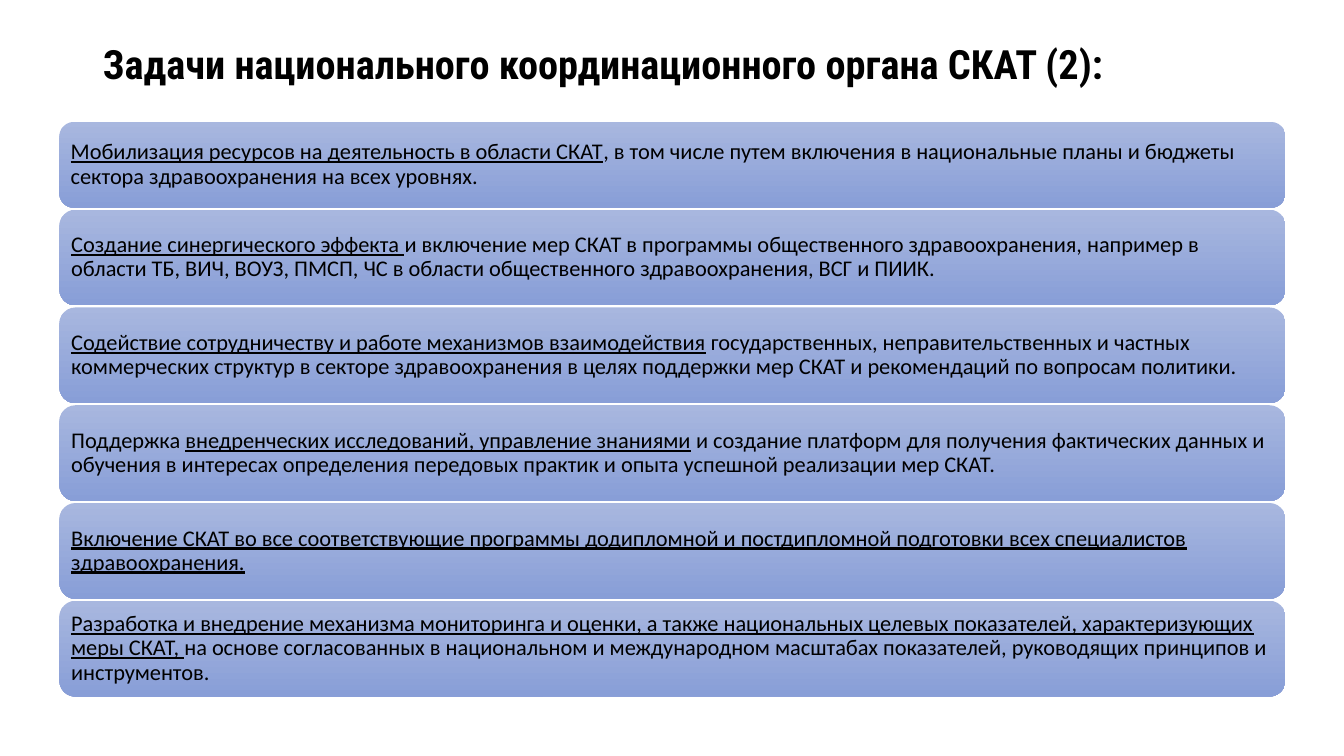
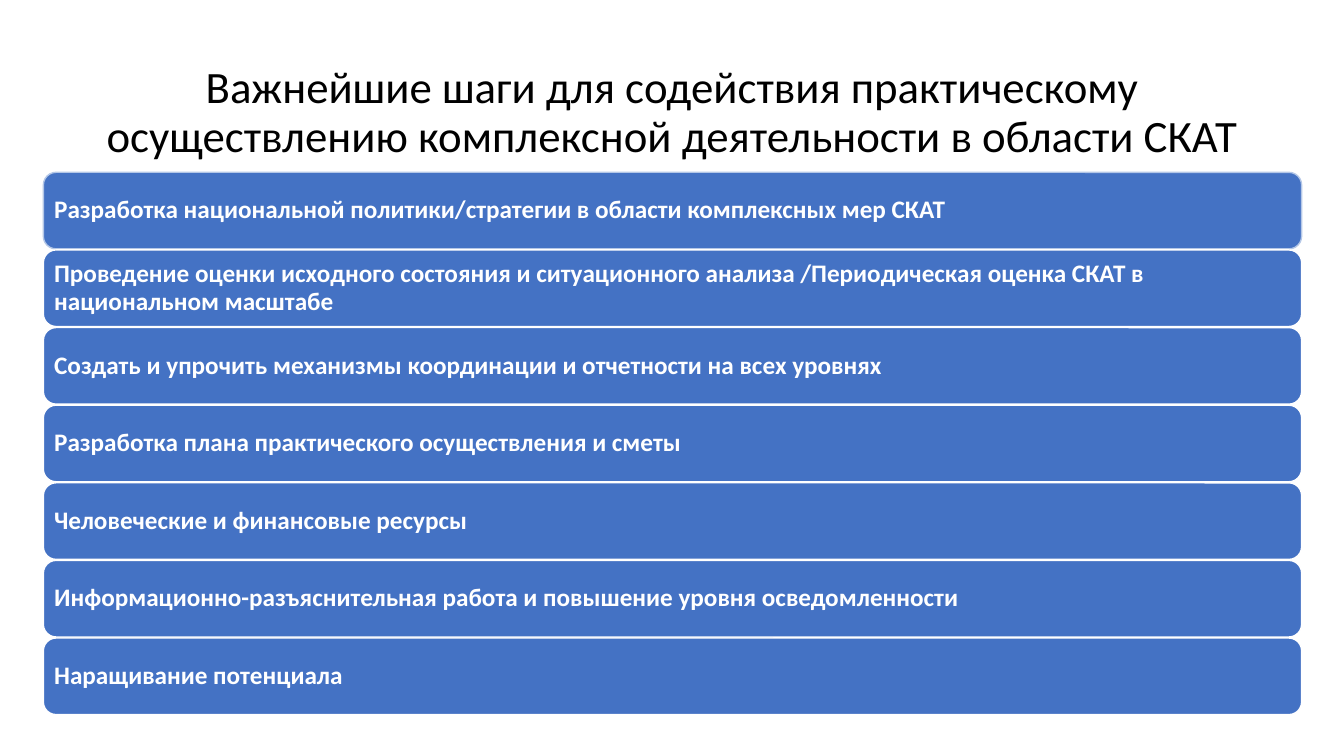
from dataclasses import dataclass
from typing import NamedTuple

from pptx import Presentation
from pptx.dml.color import RGBColor
from pptx.enum.shapes import MSO_SHAPE
from pptx.enum.text import MSO_ANCHOR, MSO_AUTO_SIZE, PP_ALIGN
from pptx.presentation import Presentation as Deck
from pptx.slide import Slide
from pptx.text.text import TextFrame
from pptx.util import Inches, Pt

BLACK = RGBColor(0x00, 0x00, 0x00)
WHITE = RGBColor(0xFF, 0xFF, 0xFF)
BLUE = RGBColor(0x44, 0x72, 0xC4)
PALE_BLUE = RGBColor(0xB4, 0xC7, 0xE7)
GRADIENT_TOP = RGBColor(0xA8, 0xB7, 0xDF)
GRADIENT_BOTTOM = RGBColor(0x88, 0x9E, 0xD7)

BODY_FONT = "Calibri"
HEADING_FONT = "Roboto Condensed"
LINE_SPACING = 0.9
BAND_INSET = 0.07
TITLE_ONLY = 5


class Box(NamedTuple):
    """Position and size in inches."""

    left: float
    top: float
    width: float
    height: float


class Phrase(NamedTuple):
    """Part of a statement, underlined or plain."""

    text: str
    underlined: bool = False


@dataclass(frozen=True)
class TextStyle:
    """Font and alignment of a text."""

    font: str
    size: float
    color: RGBColor
    bold: bool = False
    align: PP_ALIGN = PP_ALIGN.LEFT


@dataclass(frozen=True)
class Band:
    """One rounded bar of a stack."""

    phrases: tuple[Phrase, ...]
    height: float
    outline: RGBColor | None = None


@dataclass(frozen=True)
class Stack:
    """Bars one below another in a shared style."""

    left: float
    top: float
    width: float
    gap: float
    style: TextStyle
    fill: tuple[RGBColor, ...]
    bands: tuple[Band, ...]


TASK_STYLE = TextStyle(BODY_FONT, 16, BLACK)
STEP_STYLE = TextStyle(BODY_FONT, 18, WHITE, bold=True)

TASKS = (
    (
        Phrase("Мобилизация ресурсов на деятельность в области СКАТ", True),
        Phrase(", в том числе путем включения в национальные планы и бюджеты "
               "сектора здравоохранения на всех уровнях."),
    ),
    (
        Phrase("Создание синергического эффекта ", True),
        Phrase("и включение мер СКАТ в программы общественного здравоохранения, "
               "например в области ТБ, ВИЧ, ВОУЗ, ПМСП, ЧС в области "
               "общественного здравоохранения, ВСГ и ПИИК."),
    ),
    (
        Phrase("Содействие сотрудничеству и работе механизмов взаимодействия", True),
        Phrase(" государственных, неправительственных и частных коммерческих "
               "структур в секторе здравоохранения в целях поддержки мер СКАТ "
               "и рекомендаций по вопросам политики."),
    ),
    (
        Phrase("Поддержка "),
        Phrase("внедренческих исследований, управление знаниями", True),
        Phrase(" и создание платформ для получения фактических данных и обучения "
               "в интересах определения передовых практик и опыта успешной "
               "реализации мер СКАТ."),
    ),
    (
        Phrase("Включение СКАТ во все соответствующие программы додипломной и "
               "постдипломной подготовки всех специалистов здравоохранения.", True),
    ),
    (
        Phrase("Разработка и внедрение механизма мониторинга и оценки, а также "
               "национальных целевых показателей, характеризующих меры СКАТ, ", True),
        Phrase("на основе согласованных в национальном и международном масштабах "
               "показателей, руководящих принципов и инструментов."),
    ),
)

STEPS = (
    "Разработка национальной политики/стратегии в области комплексных мер СКАТ",
    "Проведение оценки исходного состояния и ситуационного анализа "
    "/Периодическая оценка СКАТ в национальном масштабе",
    "Создать и упрочить механизмы координации и отчетности на всех уровнях",
    "Разработка плана практического осуществления и сметы",
    "Человеческие и финансовые ресурсы",
    "Информационно-разъяснительная работа и повышение уровня осведомленности",
    "Наращивание потенциала",
)

TASK_STACK = Stack(
    0.59, 1.21, 12.16, 0.02, TASK_STYLE, (GRADIENT_TOP, GRADIENT_BOTTOM),
    tuple(Band(task, 0.95 if index else 0.85) for index, task in enumerate(TASKS)),
)
STEP_STACK = Stack(
    0.43, 1.71, 12.48, 0.01, STEP_STYLE, (BLUE,),
    tuple(
        Band((Phrase(step),), 0.76, WHITE if index else PALE_BLUE)
        for index, step in enumerate(STEPS)
    ),
)


def format_text(frame: TextFrame, style: TextStyle) -> None:
    """Apply the style to every paragraph and run."""
    frame.word_wrap = True
    frame.auto_size = MSO_AUTO_SIZE.NONE
    frame.vertical_anchor = MSO_ANCHOR.MIDDLE
    for paragraph in frame.paragraphs:
        paragraph.alignment = style.align
        paragraph.line_spacing = LINE_SPACING
        for run in paragraph.runs:
            run.font.name = style.font
            run.font.size = Pt(style.size)
            run.font.bold = style.bold
            run.font.color.rgb = style.color


def add_titled_slide(deck: Deck, heading: str, box: Box, style: TextStyle) -> Slide:
    """Add a slide with a placed and formatted title."""
    slide = deck.slides.add_slide(deck.slide_layouts[TITLE_ONLY])
    title = slide.shapes.title
    title.left, title.top, title.width, title.height = map(Inches, box)
    title.text_frame.text = heading
    format_text(title.text_frame, style)
    return slide


def draw_band(slide: Slide, band: Band, box: Box, stack: Stack) -> None:
    """Draw one rounded bar with its statement."""
    bar = slide.shapes.add_shape(MSO_SHAPE.ROUNDED_RECTANGLE, *map(Inches, box))
    bar.shadow.inherit = False
    if len(stack.fill) > 1:
        bar.fill.gradient()
        bar.fill.gradient_angle = 270
        for stop, color in zip(bar.fill.gradient_stops, stack.fill):
            stop.color.rgb = color
    else:
        bar.fill.solid()
        bar.fill.fore_color.rgb = stack.fill[0]
    if band.outline is None:
        bar.line.fill.background()
    else:
        bar.line.color.rgb = band.outline
        bar.line.width = Pt(1)

    frame = bar.text_frame
    frame.margin_left = frame.margin_right = Inches(BAND_INSET)
    frame.margin_top = frame.margin_bottom = Inches(BAND_INSET)
    for phrase in band.phrases:
        run = frame.paragraphs[0].add_run()
        run.text = phrase.text
        run.font.underline = phrase.underlined
    format_text(frame, stack.style)


def draw_stack(slide: Slide, stack: Stack) -> None:
    """Draw the bars from top to bottom."""
    top = stack.top
    for band in stack.bands:
        draw_band(slide, band, Box(stack.left, top, stack.width, band.height), stack)
        top += band.height + stack.gap


def main() -> None:
    """Build and save the presentation."""
    deck = Presentation()
    deck.slide_width = Inches(13.33)
    deck.slide_height = Inches(7.5)

    tasks = add_titled_slide(
        deck,
        "Задачи национального координационного органа СКАТ (2):",
        Box(0.92, 0.26, 11.5, 0.79),
        TextStyle(HEADING_FONT, 28.8, BLACK, bold=True),
    )
    draw_stack(tasks, TASK_STACK)

    steps = add_titled_slide(
        deck,
        "Важнейшие шаги для содействия практическому осуществлению "
        "комплексной деятельности в области СКАТ",
        Box(0.43, 0.4, 12.48, 1.45),
        TextStyle(BODY_FONT, 32, BLACK, align=PP_ALIGN.CENTER),
    )
    draw_stack(steps, STEP_STACK)

    deck.save("out.pptx")


if __name__ == "__main__":
    main()
